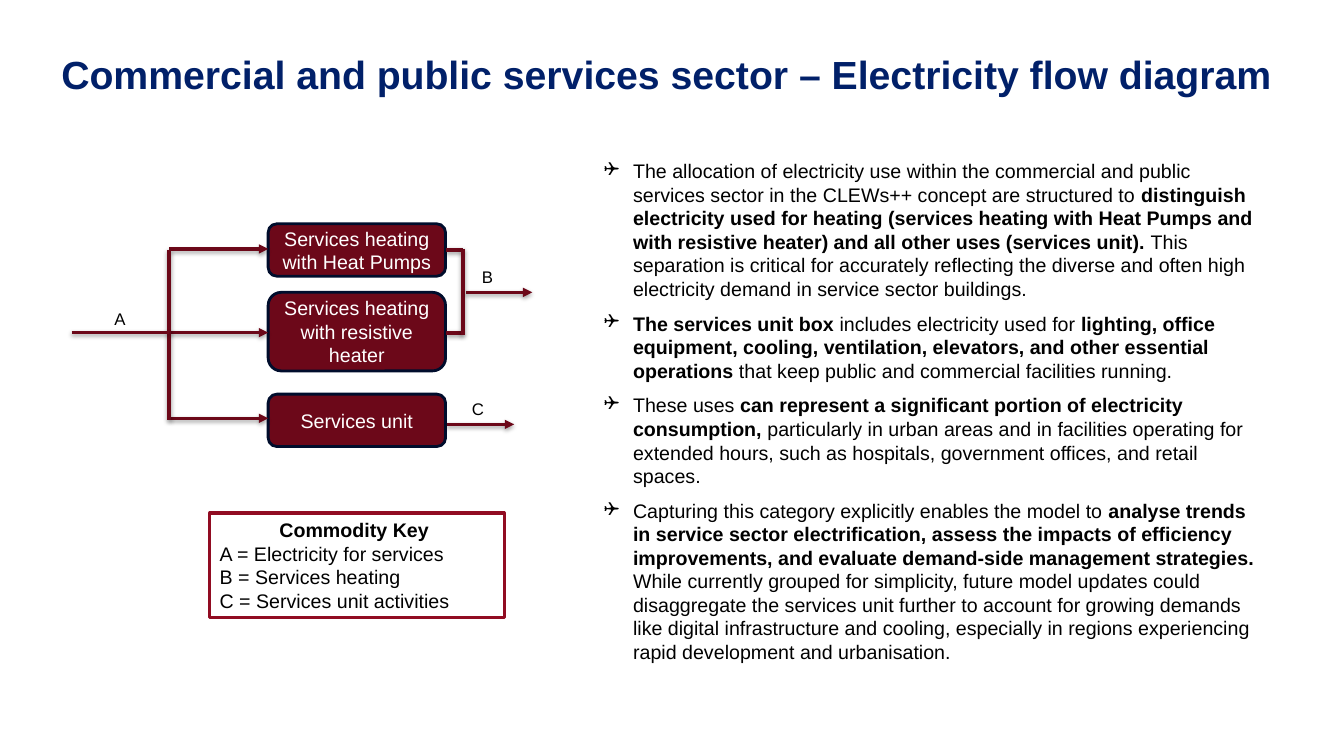
from lxml import etree
from pptx import Presentation
from pptx.dml.color import RGBColor
from pptx.enum.shapes import MSO_CONNECTOR, MSO_SHAPE
from pptx.enum.text import MSO_ANCHOR, PP_ALIGN
from pptx.oxml import parse_xml
from pptx.oxml.ns import nsdecls, qn
from pptx.util import Inches, Pt

LEFT, CENTER = PP_ALIGN.LEFT, PP_ALIGN.CENTER
TOP, MIDDLE, BOTTOM = MSO_ANCHOR.TOP, MSO_ANCHOR.MIDDLE, MSO_ANCHOR.BOTTOM
ROUNDED, RECT = MSO_SHAPE.ROUNDED_RECTANGLE, MSO_SHAPE.RECTANGLE
STRAIGHT = MSO_CONNECTOR.STRAIGHT

SHADOW = f"""<a:effectLst {nsdecls('a')}>
  <a:outerShdw blurRad="40000" dist="20000" dir="5400000" rotWithShape="0">
    <a:srgbClr val="000000"><a:alpha val="37000"/></a:srgbClr>
  </a:outerShdw>
</a:effectLst>"""


def rgb(value):
    return RGBColor.from_string(value)


def add_bullet(p, char, indent=0.29):
    pPr = p._p.get_or_add_pPr()
    pPr.set("marL", str(Inches(indent)))
    pPr.set("indent", str(-Inches(indent)))
    color = etree.SubElement(pPr, qn("a:buClr"))
    etree.SubElement(color, qn("a:srgbClr"), val="000000")
    etree.SubElement(pPr, qn("a:buFont"), typeface="Wingdings")
    etree.SubElement(pPr, qn("a:buChar"), char=char)


def write(p, text, size=14, color="000000", bold=False, align=LEFT):
    """Add text to a paragraph; ** marks switch bold on and off."""
    p.alignment = align
    for i, part in enumerate(text.split("**")):
        if part:
            r = p.add_run()
            r.text = part
            r.font.name = "Arial"
            r.font.size = Pt(size)
            r.font.bold = bold or i % 2 == 1
            r.font.color.rgb = rgb(color)


class FlowSlide:
    MAROON, NAVY, KEY_RED, TITLE_BLUE = "6C0819", "000D2C", "910C22", "012069"

    def __init__(self, prs):
        self.s = prs.slides.add_slide(prs.slide_layouts[6])

    def text(self, x, y, w, h, text, anchor=TOP, **fmt):
        sp = self.s.shapes.add_textbox(Inches(x), Inches(y), Inches(w), Inches(h))
        tf = sp.text_frame
        tf.word_wrap = True
        tf.vertical_anchor = anchor
        write(tf.paragraphs[0], text, **fmt)
        return tf

    def bullets(self, x, y, w, h, items):
        tf = self.text(x, y, w, h, items[0])
        for item in items[1:]:
            p = tf.add_paragraph()
            p.space_before = Pt(8)
            write(p, item)
        for p in tf.paragraphs:
            add_bullet(p, "❑")

    def box(self, kind, x, y, w, h, line, width, fill=None):
        sp = self.s.shapes.add_shape(kind, Inches(x), Inches(y), Inches(w), Inches(h))
        sp.shadow.inherit = False
        if fill:
            sp.fill.solid()
            sp.fill.fore_color.rgb = rgb(fill)
        else:
            sp.fill.background()
        sp.line.color.rgb = rgb(line)
        sp.line.width = Pt(width)
        tf = sp.text_frame
        tf.word_wrap = True
        return tf

    def process(self, y, h, label):
        tf = self.box(ROUNDED, 2.66, y, 1.76, h, self.NAVY, 2, self.MAROON)
        tf.vertical_anchor = MIDDLE
        write(tf.paragraphs[0], label, color="FFFFFF", align=CENTER)

    def key(self, x, y, w, h, title, entries):
        tf = self.box(RECT, x, y, w, h, self.KEY_RED, 2.25)
        tf.vertical_anchor = TOP
        write(tf.paragraphs[0], title, bold=True, align=CENTER)
        for entry in entries:
            write(tf.add_paragraph(), entry)

    def flow(self, x1, y1, x2, y2, width=2.25, arrow=False):
        line = self.s.shapes.add_connector(
            STRAIGHT, Inches(x1), Inches(y1), Inches(x2), Inches(y2))
        line.line.color.rgb = rgb(self.MAROON)
        line.line.width = Pt(width)
        if arrow:
            etree.SubElement(line.line._get_or_add_ln(), qn("a:tailEnd"), type="triangle")
        line._element.spPr.append(parse_xml(SHADOW))


def main():
    prs = Presentation()
    prs.slide_width, prs.slide_height = Inches(13.33), Inches(7.5)
    slide = FlowSlide(prs)

    title = slide.text(
        0.51, 0.31, 12.34, 0.71,
        "Commercial and public services sector – Electricity flow diagram",
        anchor=BOTTOM, size=28, color=slide.TITLE_BLUE, bold=True)
    title.paragraphs[0].line_spacing = 0.9

    slide.bullets(5.89, 1.53, 6.75, 5.15, [
        "The allocation of electricity use within the commercial and public services "
        "sector in the CLEWs++ concept are structured to **distinguish electricity used "
        "for heating (services heating with Heat Pumps and with resistive heater) and all "
        "other uses (services unit).** This separation is critical for accurately "
        "reflecting the diverse and often high electricity demand in service sector "
        "buildings.",
        "**The services unit box **includes electricity used for** lighting, office "
        "equipment, cooling, ventilation, elevators, and other essential operations** "
        "that keep public and commercial facilities running.",
        "These uses **can represent a significant portion of electricity consumption, "
        "**particularly in urban areas and in facilities operating for extended hours, "
        "such as hospitals, government offices, and retail spaces.",
        "Capturing this category explicitly enables the model to **analyse trends in "
        "service sector electrification, assess the impacts of efficiency improvements, "
        "and evaluate demand-side management strategies. **While currently grouped for "
        "simplicity, future model updates could disaggregate the services unit further "
        "to account for growing demands like digital infrastructure and cooling, "
        "especially in regions experiencing rapid development and urbanisation.",
    ])

    # Processes, each fed by an arrow from the supply trunk
    trunk_x, join_x = 1.68, 4.59
    for y, h, feed_y, label in [
        (2.22, 0.52, 2.47, "Services heating with Heat Pumps"),
        (2.9, 0.78, 3.3, "Services heating with resistive heater"),
        (3.91, 0.52, 4.15, "Services unit"),
    ]:
        slide.process(y, h, label)
        slide.flow(trunk_x, feed_y, 2.66, feed_y, arrow=True)
    slide.flow(trunk_x, 2.48, trunk_x, 4.17, width=3)
    slide.flow(0.71, 3.3, trunk_x, 3.3)

    # Both heating outputs join into B; the services unit gives C
    for y in (2.48, 3.3):
        slide.flow(join_x, y, 4.42, y, width=3)
    slide.flow(join_x, 2.47, join_x, 3.32, width=3)
    slide.flow(4.62, 2.9, 5.28, 2.9, arrow=True)
    slide.flow(4.43, 4.21, 5.1, 4.21, arrow=True)

    for x, y, w, label in [(0.83, 3.01, 0.72, "A"), (4.57, 2.6, 0.53, "B"),
                           (4.38, 3.91, 0.72, "C")]:
        slide.text(x, y, w, 0.3, label, size=12, align=CENTER)

    slide.key(2.08, 5.09, 2.92, 1.04, "Commodity Key ", [
        "A = Electricity for services",
        "B = Services heating",
        "C = Services unit activities",
    ])
    prs.save("out.pptx")


if __name__ == "__main__":
    main()
